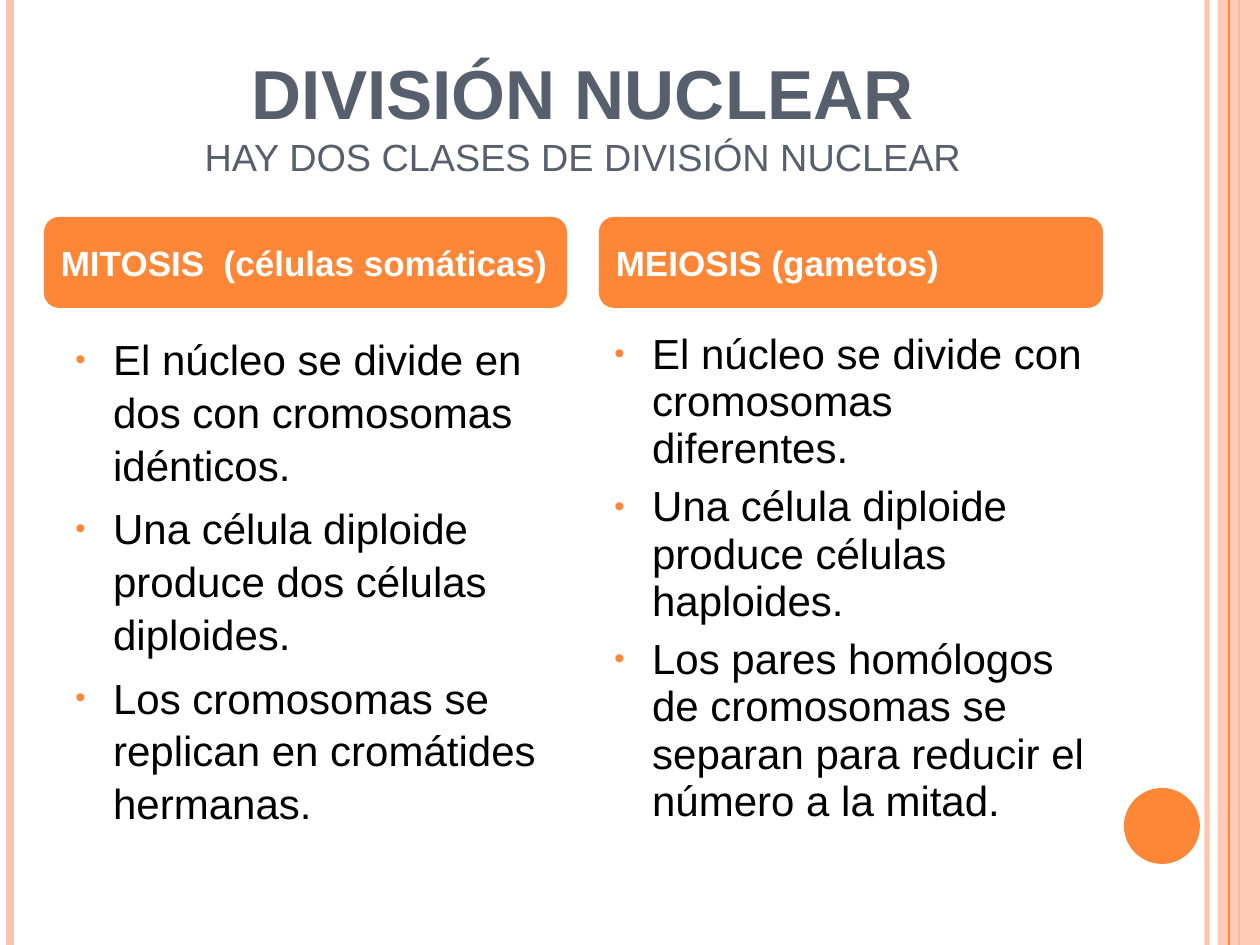
"""Build the slide comparing the two classes of nuclear division."""
from typing import NamedTuple

from lxml.etree import SubElement
from pptx import Presentation
from pptx.dml.color import RGBColor
from pptx.enum.shapes import MSO_CONNECTOR, MSO_SHAPE
from pptx.enum.text import MSO_ANCHOR, PP_ALIGN
from pptx.oxml.ns import qn
from pptx.util import Emu, Inches, Pt

PX = 914400 / 126
W, H = 1260, 945
COLORS = {"orange": "FE8637", "peach": "FEC2AC", "slate": "575F6D",
          "black": "000000", "white": "FFFFFF"}


class Box(NamedTuple):
    x: int
    y: int
    w: int
    h: int


class Rule(NamedTuple):
    x: int
    color: str
    width: float
    alpha: int = 100


class Column(NamedTuple):
    header: str
    header_box: Box
    body_box: Box
    spacing: float
    items: tuple[str, ...]


BACK_RULES = (Rule(1207, "peach", 3, 93), Rule(10, "peach", 4.5),
              Rule(1239, "orange", 1.5))
FRONT_RULE = Rule(1229, "orange", 0.75)
BAND = Box(1218, 0, 42, H)
DISC = Box(1124, 788, 76, 76)
TITLE = Box(63, 38, 1040, 147)
COLUMNS = (
    Column("MITOSIS  (células somáticas)", Box(44, 217, 523, 91),
           Box(63, 325, 504, 536), 1.05,
           ("El núcleo se divide en dos con cromosomas idénticos.",
            "Una célula diploide produce dos células diploides.",
            "Los cromosomas se replican en cromátides hermanas.")),
    Column("MEIOSIS (gametos)", Box(599, 217, 504, 91),
           Box(602, 325, 504, 536), 0.94,
           ("El núcleo se divide con cromosomas diferentes.",
            "Una célula diploide produce células haploides.",
            "Los pares homólogos de cromosomas se separan para reducir "
            "el número a la mitad.")),
)


def px(n: int) -> Emu:
    return Emu(round(n * PX))


def rgb(name: str) -> RGBColor:
    return RGBColor.from_string(COLORS[name])


def set_alpha(parent, alpha: int) -> None:
    if alpha < 100:
        color = next(parent.iter(qn("a:srgbClr")))
        SubElement(color, qn("a:alpha"), val=str(alpha * 1000))


def add_rule(s, rule: Rule) -> None:
    line = s.shapes.add_connector(MSO_CONNECTOR.STRAIGHT, px(rule.x), 0,
                                  px(rule.x), px(H))
    line.line.color.rgb = rgb(rule.color)
    line.line.width = Pt(rule.width)
    props = line._element.spPr
    set_alpha(props, rule.alpha)
    SubElement(props, qn("a:effectLst"))


def add_shape(s, kind: MSO_SHAPE, box: Box, color: str, alpha: int = 100):
    sp = s.shapes.add_shape(kind, *map(px, box))
    sp.shadow.inherit = False
    sp.fill.solid()
    sp.fill.fore_color.rgb = rgb(color)
    sp.line.fill.background()
    set_alpha(sp._element.spPr, alpha)
    return sp


def add_text_frame(s, box: Box):
    tf = s.shapes.add_textbox(*map(px, box)).text_frame
    tf.word_wrap = True
    return tf


def add_run(p, text: str, *, size: float, color: str, bold: bool = False) -> None:
    r = p.add_run()
    r.text = text
    r.font.name = "Arial"
    r.font.size = Pt(size)
    r.font.bold = bold
    r.font.color.rgb = rgb(color)


def add_bullet(p) -> None:
    props = p._p.get_or_add_pPr()
    props.set("marL", str(Inches(0.3)))
    props.set("indent", str(-Inches(0.3)))
    SubElement(SubElement(props, qn("a:buClr")), qn("a:srgbClr"),
               val=COLORS["orange"])
    SubElement(props, qn("a:buSzPct"), val="70000")
    SubElement(props, qn("a:buFont"), typeface="Arial")
    SubElement(props, qn("a:buChar"), char="•")


def add_title(s) -> None:
    tf = add_text_frame(s, TITLE)
    tf.vertical_anchor = MSO_ANCHOR.BOTTOM
    p = tf.paragraphs[0]
    p.alignment = PP_ALIGN.CENTER
    add_run(p, "DIVISIÓN NUCLEAR", size=39.6, color="slate", bold=True)
    p.add_line_break()
    add_run(p, "HAY DOS CLASES DE DIVISIÓN NUCLEAR", size=21.6, color="slate")


def add_body(s, column: Column) -> None:
    tf = add_text_frame(s, column.body_box)
    for i, item in enumerate(column.items):
        p = tf.add_paragraph() if i else tf.paragraphs[0]
        p.line_spacing = column.spacing
        p.space_before = Pt(6 if i else 0)
        add_bullet(p)
        add_run(p, item, size=24, color="black")


def add_header(s, column: Column) -> None:
    sp = add_shape(s, MSO_SHAPE.ROUNDED_RECTANGLE, column.header_box, "orange")
    tf = sp.text_frame
    tf.word_wrap = True
    tf.vertical_anchor = MSO_ANCHOR.MIDDLE
    p = tf.paragraphs[0]
    p.alignment = PP_ALIGN.LEFT
    add_run(p, column.header, size=20, color="white", bold=True)


def main() -> None:
    prs = Presentation()
    prs.slide_width, prs.slide_height = px(W), px(H)
    s = prs.slides.add_slide(prs.slide_layouts[6])
    for rule in BACK_RULES:
        add_rule(s, rule)
    add_shape(s, MSO_SHAPE.RECTANGLE, BAND, "peach", alpha=87)
    add_rule(s, FRONT_RULE)
    add_shape(s, MSO_SHAPE.OVAL, DISC, "orange")
    add_title(s)
    for column in COLUMNS:
        add_body(s, column)
    for column in COLUMNS:
        add_header(s, column)
    prs.save("out.pptx")


if __name__ == "__main__":
    main()
